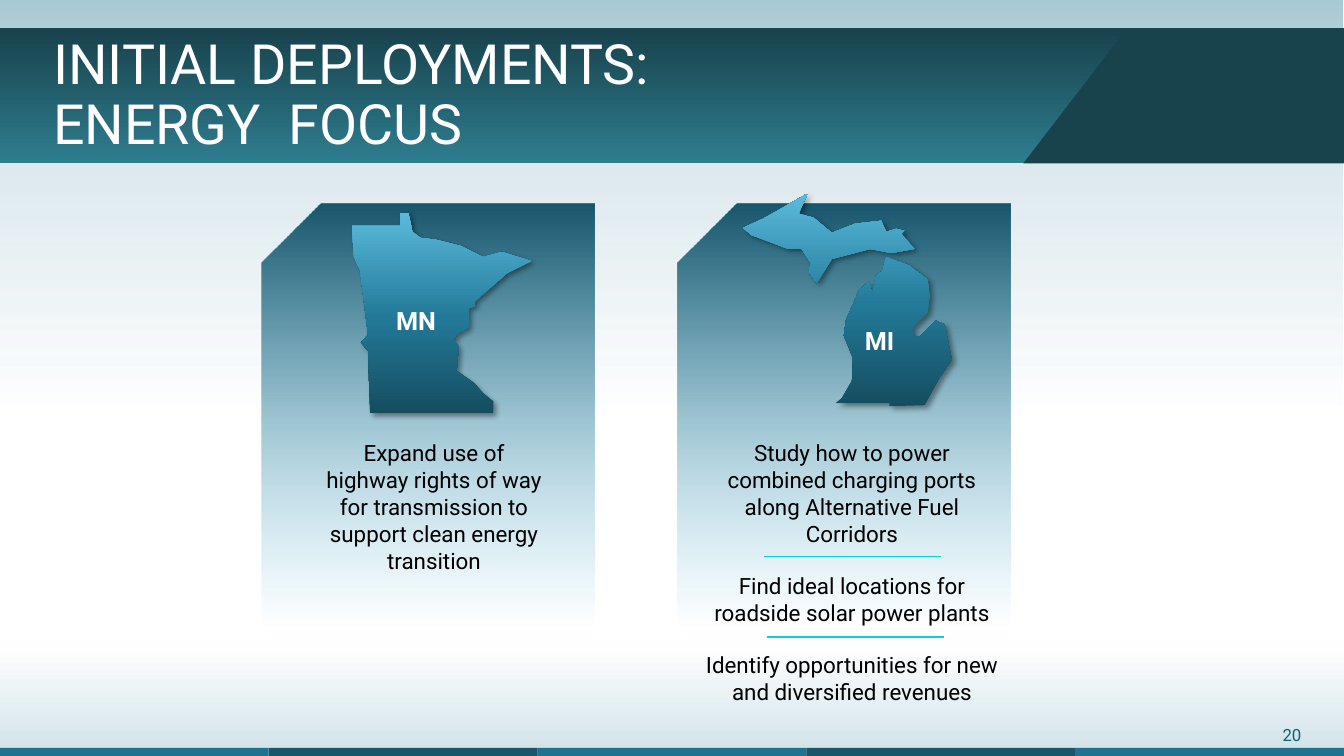
import collections
import pptx
import pptx.util
import pptx.oxml
import pptx.dml.color
import pptx.enum.shapes
import pptx.enum.text
import lxml.etree

Inches = pptx.util.Inches
Pt = pptx.util.Pt
RGBColor = pptx.dml.color.RGBColor
Kind = pptx.enum.shapes.MSO_SHAPE
Align = pptx.enum.text.PP_ALIGN
Fit = pptx.enum.text.MSO_AUTO_SIZE
tag = pptx.oxml.ns.qn

BLUE = RGBColor(0x20, 0x73, 0x90)
NAVY = RGBColor(0x18, 0x56, 0x6C)
DARK = RGBColor(0x18, 0x42, 0x4C)
TEAL = RGBColor(0x2E, 0x7D, 0x8F)
SKY = RGBColor(0x5B, 0xBA, 0xDB)
DEEP = RGBColor(0x15, 0x4D, 0x60)
MID = RGBColor(0x22, 0x7A, 0x98)
CYAN = RGBColor(0x0F, 0xCB, 0xDF)
PAGE = RGBColor(0x08, 0x66, 0x70)
WHITE = RGBColor(0xFF, 0xFF, 0xFF)
BLACK = RGBColor(0, 0, 0)

FONT = "Roboto"
SPACE = 'xmlns:a="http://schemas.openxmlformats.org/drawingml/2006/main"'
WIDE, HIGH = 13.33, 7.5
EDGE = -0.01
BAND_TOP, BAND_HIGH = 0.28, 1.34
CARD_TOP, CARD_WIDE, CARD_HIGH = 2.02, 3.3, 5.26
BODY_TOP = 4.31
STRIPES = 5
RULE_WIDE = 1.75

Panel = collections.namedtuple("Panel", "left name label rings body texts rules")

MINNESOTA = [
    (5.27, 2.59), (5.03, 2.71), (4.71, 2.99), (4.71, 3.04), (4.65, 3.06),
    (4.65, 3.25), (4.53, 3.32), (4.5, 3.38), (4.55, 3.44), (4.53, 3.68),
    (4.7, 3.8), (4.8, 3.91), (4.89, 3.98), (4.89, 4.1), (3.67, 4.1),
    (3.65, 3.48), (3.58, 3.4), (3.65, 3.32), (3.57, 2.68), (3.51, 2.55),
    (3.49, 2.24), (3.97, 2.24), (3.97, 2.11), (4.05, 2.11), (4.09, 2.3),
    (4.17, 2.36), (4.33, 2.38), (4.57, 2.44), (4.79, 2.55), (4.98, 2.5),
]
UPPER = [
    (8.89, 2.27), (8.97, 2.29), (8.94, 2.32), (9.07, 2.47), (8.84, 2.51),
    (8.63, 2.47), (8.25, 2.57), (8.1, 2.81), (8.02, 2.7), (8.04, 2.61),
    (7.95, 2.47), (7.82, 2.47), (7.45, 2.33), (7.37, 2.26), (7.57, 2.17),
    (8.01, 1.92), (7.92, 2.12), (8.07, 2.16), (8.25, 2.31), (8.48, 2.22),
    (8.74, 2.19), (8.79, 2.3),
]
LOWER = [
    (9.44, 3.57), (9.31, 3.76), (9.17, 4.02), (8.82, 4.03), (8.82, 4),
    (8.29, 4), (8.35, 3.95), (8.45, 3.78), (8.46, 3.55), (8.37, 3.33),
    (8.39, 3.18), (8.52, 2.88), (8.62, 2.79), (8.65, 2.91), (8.69, 2.73),
    (8.75, 2.69), (8.79, 2.55), (9.01, 2.63), (9.2, 2.77), (9.22, 2.94),
    (9.2, 3.1), (9.05, 3.25), (9.07, 3.34), (9.12, 3.34), (9.28, 3.18),
    (9.37, 3.22),
]
PANELS = [
    Panel(left=2.6, name="MN", label=(3.83, 2.98, 0.64, 0.4),
          rings=[MINNESOTA], body=(3.09, BODY_TOP, 2.43, 1.45),
          texts=["Expand use of highway rights of way for transmission "
                 "to support clean energy transition"],
          rules=[]),
    Panel(left=6.72, name="MI", label=(8.48, 3.18, 0.58, 0.4),
          rings=[UPPER, LOWER], body=(6.88, BODY_TOP, 3.14, 2.76),
          texts=["Study how to power combined charging ports along "
                 "Alternative Fuel Corridors",
                 "Find ideal locations for roadside solar power plants",
                 "Identify opportunities for new and diversified revenues"],
          rules=[(7.58, 5.52), (7.61, 6.32)]),
]


def paint(shape, fill, turn=270):
    """Fill a shape with a colour or with (place, colour, opacity) stops."""
    shape.shadow.inherit = False
    shape.line.fill.background()
    if isinstance(fill, RGBColor):
        shape.fill.solid()
        shape.fill.fore_color.rgb = fill
        return
    stops = "".join(
        f'<a:gs pos="{place * 1000}"><a:srgbClr val="{tint}">'
        f'<a:alpha val="{alpha * 1000}"/></a:srgbClr></a:gs>'
        for place, tint, alpha in fill)
    shape.fill.background()
    props = shape.element.spPr
    props.replace(props.find(tag("a:noFill")), pptx.oxml.parse_xml(
        f'<a:gradFill {SPACE} rotWithShape="1"><a:gsLst>{stops}</a:gsLst>'
        f'<a:lin ang="{turn * 60000}" scaled="0"/></a:gradFill>'))


def block(shapes, box, fill, turn=270, kind=Kind.RECTANGLE):
    """Add a preset shape and return it."""
    shape = shapes.add_shape(kind, *map(Inches, box))
    paint(shape, fill, turn)
    return shape


def outline(shapes, rings, fill):
    """Add one shape made of closed rings of points and return it."""
    rings = [[tuple(map(Inches, point)) for point in ring] for ring in rings]
    pen = shapes.build_freeform(*rings[0][0])
    for ring in rings:
        pen.move_to(*ring[0])
        pen.add_line_segments(ring[1:], close=True)
    shape = pen.convert_to_shape()
    paint(shape, fill)
    return shape


def write(shapes, box, texts, size, tint, align=Align.LEFT, bold=False, after=0):
    """Add a text box with one paragraph per text and return its frame."""
    frame = shapes.add_textbox(*map(Inches, box)).text_frame
    frame.word_wrap = True
    frame.auto_size = Fit.SHAPE_TO_FIT_TEXT
    for count, text in enumerate(texts):
        para = frame.add_paragraph() if count else frame.paragraphs[0]
        para.alignment = align
        para.space_after = Pt(after)
        for row, line in enumerate(text.split("\n")):
            if row:
                para.add_line_break()
            run = para.add_run()
            run.text = line
            run.font.name = FONT
            run.font.size = Pt(size)
            run.font.bold = bold
            run.font.color.rgb = tint
    return frame


def rule(shapes, left, top):
    """Add a thin level line."""
    line = shapes.add_connector(
        pptx.enum.shapes.MSO_CONNECTOR.STRAIGHT,
        *map(Inches, (left, top, left + RULE_WIDE, top)))
    line.line.color.rgb = CYAN
    line.line.width = Pt(1)
    lxml.etree.SubElement(line.element.spPr, tag("a:effectLst"))


def card(shapes, left):
    """Add a fading card with its top left corner cut."""
    shape = block(shapes, (left, CARD_TOP, CARD_WIDE, CARD_HIGH),
                  [(0, NAVY, 100), (80, SKY, 0)],
                  kind=Kind.SNIP_2_DIAG_RECTANGLE)
    shape.adjustments[0] = 0
    shape.adjustments[1] = 0.178
    shape.rotation = 180
    shape.element.spPr.find(tag("a:xfrm")).set("flipH", "1")


def state(shapes, rings, name, label):
    """Add a shadowed state outline grouped with its name."""
    group = shapes.add_group_shape().shapes
    shape = outline(group, rings, [(0, DEEP, 100), (48, MID, 100), (100, SKY, 100)])
    shape.element.spPr.find(tag("a:effectLst")).append(pptx.oxml.parse_xml(
        f'<a:outerShdw {SPACE} blurRad="{Pt(4)}" dist="{Pt(3)}" dir="2700000" '
        f'algn="tl" rotWithShape="0"><a:srgbClr val="{BLACK}">'
        '<a:alpha val="40000"/></a:srgbClr></a:outerShdw>'))
    write(group, label, [name], 18, WHITE, bold=True)


def backdrop(shapes):
    """Add the two tints that fade from the slide's top and foot."""
    foot = block(shapes, (EDGE, 6.35, WIDE, 1.15),
                 [(8, BLUE, 0), (88, BLUE, 18), (100, BLUE, 22)])
    foot.rotation = 180
    block(shapes, (EDGE, 0, WIDE, 4.04),
          [(0, BLUE, 0), (71, BLUE, 18), (100, BLUE, 39)])


def band(shapes):
    """Add the title band with its slanted end."""
    base = BAND_TOP + BAND_HIGH
    block(shapes, (EDGE, BAND_TOP, WIDE - EDGE, BAND_HIGH),
          [(0, DARK, 100), (100, TEAL, 100)], 90)
    outline(shapes, [[(11.18, BAND_TOP), (WIDE, BAND_TOP),
                      (WIDE, base), (10.15, base)]], DARK)
    title = write(shapes, (0.43, 0.31, 9.49, 1.3),
                  ["INITIAL DEPLOYMENTS:\nENERGY  FOCUS"], 39.6, WHITE)
    title.auto_size = Fit.NONE
    title.vertical_anchor = pptx.enum.text.MSO_ANCHOR.MIDDLE
    title.paragraphs[0].line_spacing = 0.9


def footer(shapes):
    """Add the page number and the strip of alternating stripes."""
    write(shapes, (12.3, 7.14, 1.03, 0.3), ["20"], 12, PAGE, Align.CENTER)
    strip = shapes.add_group_shape().shapes
    step = WIDE / STRIPES
    for count in range(STRIPES):
        block(strip, (count * step, 7.42, step, 0.1), (BLUE, NAVY)[count % 2])


def main():
    """Build the slide and save it."""
    deck = pptx.Presentation()
    deck.slide_width, deck.slide_height = Inches(WIDE), Inches(HIGH)
    shapes = deck.slides.add_slide(deck.slide_layouts[6]).shapes
    backdrop(shapes)
    band(shapes)
    footer(shapes)
    for panel in PANELS:
        card(shapes, panel.left)
        state(shapes, panel.rings, panel.name, panel.label)
        write(shapes, panel.body, panel.texts, 16, BLACK, Align.CENTER, after=18)
        for left, top in panel.rules:
            rule(shapes, left, top)
    deck.save("out.pptx")


if __name__ == "__main__":
    main()
